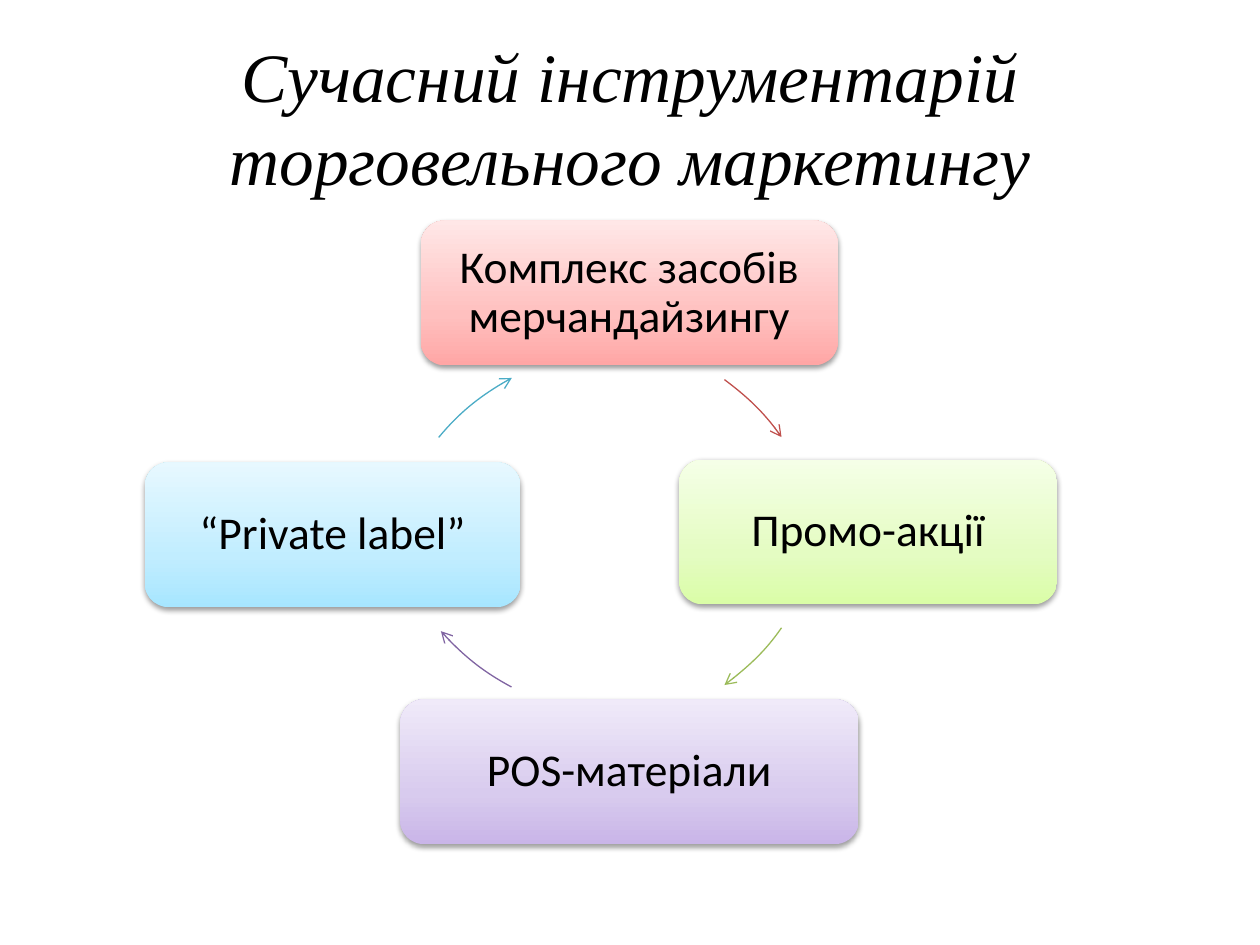
"""Build a slide showing the cycle of four trade marketing tools."""
import copy
from typing import Any, NamedTuple

import lxml.etree
import pptx
import pptx.dml.color
import pptx.enum.shapes
import pptx.enum.text
import pptx.oxml.ns
import pptx.shapes.autoshape
import pptx.shapes.shapetree
import pptx.util

Pt = pptx.util.Pt
RGBColor = pptx.dml.color.RGBColor
qn = pptx.oxml.ns.qn

BLACK = RGBColor(0x00, 0x00, 0x00)
REDS = (RGBColor(0xFF, 0xA6, 0xA5), RGBColor(0xFF, 0xC0, 0xBF), RGBColor(0xFF, 0xE7, 0xE7))
GREENS = (RGBColor(0xDA, 0xFD, 0xA7), RGBColor(0xE4, 0xFC, 0xC2), RGBColor(0xF5, 0xFF, 0xE7))
PURPLES = (RGBColor(0xC9, 0xB5, 0xE8), RGBColor(0xD8, 0xCB, 0xEE), RGBColor(0xF0, 0xEA, 0xF9))
BLUES = (RGBColor(0xA7, 0xE6, 0xFF), RGBColor(0xC1, 0xED, 0xFF), RGBColor(0xE7, 0xF8, 0xFF))
RED_LINE = RGBColor(0xC0, 0x50, 0x4D)
GREEN_LINE = RGBColor(0x9B, 0xBB, 0x59)
PURPLE_LINE = RGBColor(0x80, 0x64, 0xA2)
BLUE_LINE = RGBColor(0x4B, 0xAC, 0xC6)

STOP_POSITIONS = (0, 0.35, 1)
TOOL_HEIGHT = 82.8
CIRCLE_SIZE = 273.6
TITLE_FONT = {"name": "Times New Roman", "size": Pt(39.6), "italic": True}
TOOL_FONT = {"name": "Calibri", "size": Pt(26)}
FRAME_FORMAT = {"word_wrap": True, "vertical_anchor": pptx.enum.text.MSO_ANCHOR.MIDDLE}
TOOL_MARGINS = {f"margin_{side}": Pt(8) for side in ("left", "top", "right", "bottom")}


class Tool(NamedTuple):
    text: str
    left: float
    top: float
    width: float
    colors: tuple[RGBColor, ...]


class Arc(NamedTuple):
    left: float
    top: float
    points: tuple[tuple[float, float], ...]
    color: RGBColor


TOOLS = (
    Tool("Комплекс засобів мерчандайзингу", 240.5, 126, 238.3, REDS),
    Tool("Промо-акції", 388.1, 262.6, 216, GREENS),
    Tool("POS-матеріали", 228.7, 399.6, 262, PURPLES),
    Tool("“Private label”", 82.8, 264.2, 214.6, BLUES),
)
ARCS = (
    Arc(198.7, 192.2, ((414, 217), (426.2, 226.1), (437.8, 236.9), (446.6, 249.8)), RED_LINE),
    Arc(198.7, 143.3, ((446.6, 358.8), (437.8, 371.5), (426.2, 382.3), (414, 391.5)), GREEN_LINE),
    Arc(218.9, 134.6, ((292.3, 392.6), (277.2, 384.5), (263.5, 373.7), (252, 360.7)), PURPLE_LINE),
    Arc(219.6, 200.2, ((250.7, 250), (262.1, 236.2), (276.5, 224.6), (292.5, 216)), BLUE_LINE),
)


def apply_format(target: Any, values: dict[str, Any]) -> None:
    for name, value in values.items():
        setattr(target, name, value)


def write_text(
    box: pptx.shapes.autoshape.Shape, text: str, font: dict[str, Any], spacing: float
) -> None:
    apply_format(box.text_frame, FRAME_FORMAT)
    para = box.text_frame.paragraphs[0]
    apply_format(para, {"alignment": pptx.enum.text.PP_ALIGN.CENTER, "line_spacing": spacing})
    span = para.add_run()
    span.text = text
    apply_format(span.font, font)
    span.font.color.rgb = BLACK


def fill_gradient(box: pptx.shapes.autoshape.Shape, colors: tuple[RGBColor, ...]) -> None:
    box.fill.gradient()
    box.fill.gradient_angle = 90
    stops = box.element.spPr.find(qn("a:gradFill")).find(qn("a:gsLst"))
    stops.insert(1, copy.deepcopy(stops[0]))
    for stop, position, color in zip(box.fill.gradient_stops, STOP_POSITIONS, colors):
        stop.position = position
        stop.color.rgb = color


def add_shadow(box: pptx.shapes.autoshape.Shape) -> None:
    box.shadow.inherit = False
    effects = box.element.spPr.find(qn("a:effectLst"))
    shadow = lxml.etree.SubElement(
        effects, qn("a:outerShdw"),
        blurRad=str(Pt(3.1)), dist=str(Pt(1.6)), dir="5400000", rotWithShape="0",
    )
    color = lxml.etree.SubElement(shadow, qn("a:srgbClr"), val=str(BLACK))
    lxml.etree.SubElement(color, qn("a:alpha"), val="38000")


def draw_tool(shapes: pptx.shapes.shapetree.SlideShapes, tool: Tool) -> None:
    box = shapes.add_shape(
        pptx.enum.shapes.MSO_SHAPE.ROUNDED_RECTANGLE,
        Pt(tool.left), Pt(tool.top), Pt(tool.width), Pt(TOOL_HEIGHT),
    )
    fill_gradient(box, tool.colors)
    box.line.fill.background()
    add_shadow(box)
    apply_format(box.text_frame, TOOL_MARGINS)
    write_text(box, tool.text, TOOL_FONT, 0.9)


def bend_in_circle_frame(curve: pptx.shapes.autoshape.Shape, arc: Arc) -> None:
    size = Pt(CIRCLE_SIZE)
    frame = {"left": Pt(arc.left), "top": Pt(arc.top), "width": size, "height": size}
    apply_format(curve, frame)
    for node, (x, y) in zip(curve.element.iter(qn("a:pt")), arc.points):
        node.set("x", str(Pt(x - arc.left)))
        node.set("y", str(Pt(y - arc.top)))
    segments = list(curve.element.iter(qn("a:lnTo")))
    course = segments[0].getparent()
    course.set("w", str(size))
    course.set("h", str(size))
    bezier = lxml.etree.SubElement(course, qn("a:cubicBezTo"))
    for segment in segments:
        bezier.append(segment[0])
        course.remove(segment)


def draw_arc(shapes: pptx.shapes.shapetree.SlideShapes, arc: Arc) -> None:
    start, *controls = [(Pt(x), Pt(y)) for x, y in arc.points]
    builder = shapes.build_freeform(*start)
    builder.add_line_segments(controls, close=False)
    curve = builder.convert_to_shape()
    bend_in_circle_frame(curve, arc)
    curve.shadow.inherit = False
    curve.fill.background()
    curve.line.width = Pt(0.75)
    curve.line.color.rgb = arc.color
    outline = curve.element.spPr.find(qn("a:ln"))
    lxml.etree.SubElement(outline, qn("a:tailEnd"), type="arrow")


def main() -> None:
    deck = pptx.Presentation()
    apply_format(deck, {"slide_width": Pt(720), "slide_height": Pt(540)})
    page = deck.slides.add_slide(deck.slide_layouts[6])
    title = page.shapes.add_textbox(Pt(36), Pt(21.6), Pt(648), Pt(90))
    write_text(title, "Сучасний інструментарій торговельного маркетингу", TITLE_FONT, 1.0)
    for tool, arc in zip(TOOLS, ARCS):
        draw_tool(page.shapes, tool)
        draw_arc(page.shapes, arc)
    deck.save("out.pptx")


if __name__ == "__main__":
    main()
